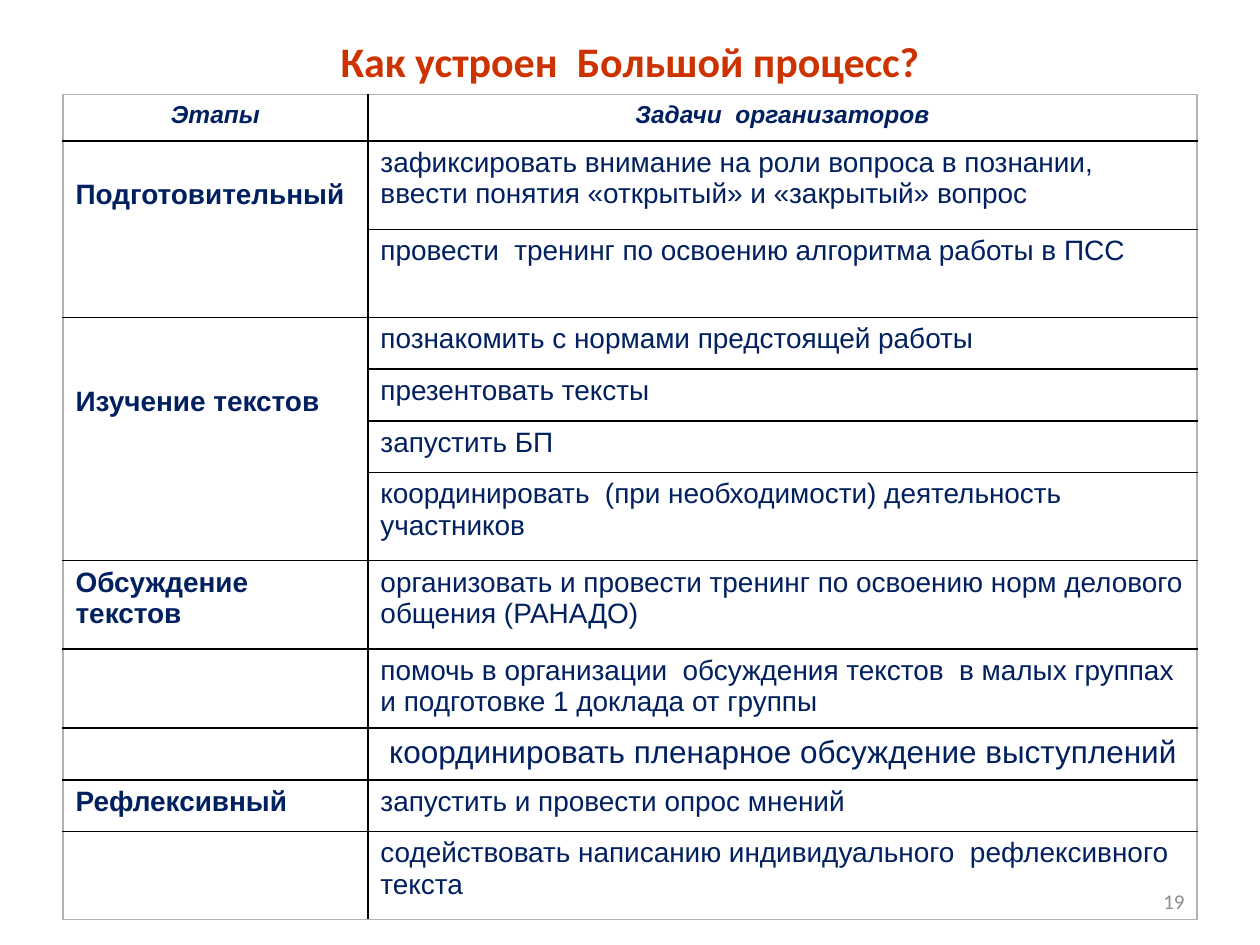
from dataclasses import dataclass

from lxml import etree
from pptx import Presentation
from pptx.dml.color import RGBColor
from pptx.enum import text as t
from pptx.oxml import ns
from pptx.util import Inches, Pt

COLORS = {
    "title": "CC3300",
    "text": "002060",
    "number": "8C8C8C",
    "inner": "000000",
    "outer": "B2B2B2",
    "paper": "FFFFFF",
}
COLUMN_WIDTHS = (2.42, 6.58)
HEADER_HEIGHT, ONE_LINE, TWO_LINES = 0.37, 0.41, 0.7
LINE_HEIGHT = 0.25
MARGIN = 0.05


@dataclass
class Task:
    lines: tuple[str, ...]
    height: float = ONE_LINE
    size: int = 16


@dataclass
class Stage:
    name: str
    tasks: list[Task]
    merged: bool = False
    lines_above: int = 0


STAGES = [
    Stage("Подготовительный", [
        Task(("зафиксировать внимание на роли вопроса в познании,",
              "ввести понятия «открытый» и «закрытый» вопрос"), TWO_LINES),
        Task(("провести  тренинг по освоению алгоритма работы в ПСС",), TWO_LINES),
    ], merged=True, lines_above=1),
    Stage("Изучение текстов", [
        Task(("познакомить с нормами предстоящей работы",)),
        Task(("презентовать тексты",)),
        Task(("запустить БП",)),
        Task(("координировать  (при необходимости) деятельность участников",), TWO_LINES),
    ], merged=True, lines_above=2),
    Stage("Обсуждение текстов", [
        Task(("организовать и провести тренинг по освоению норм делового "
              "общения (РАНАДО)",), TWO_LINES),
        Task(("помочь в организации  обсуждения текстов  в малых группах "
              "и подготовке 1 доклада от группы",), 0.63),
        Task((" координировать пленарное обсуждение выступлений",), size=18),
    ]),
    Stage("Рефлексивный", [
        Task(("запустить и провести опрос мнений",)),
        Task(("содействовать написанию индивидуального  рефлексивного текста",), TWO_LINES),
    ]),
]


def add_run(paragraph, words: str, size: int, color: str, font: str = "Arial",
            bold: bool = False, italic: bool = False) -> None:
    run = paragraph.add_run()
    run.text = words
    run.font.name = font
    run.font.size = Pt(size)
    run.font.bold = bold
    run.font.italic = italic
    run.font.color.rgb = RGBColor.from_string(COLORS[color])


def write_cell(cell, lines: tuple[str, ...], size: int = 16, bold: bool = False,
               italic: bool = False, align=t.PP_ALIGN.LEFT) -> None:
    frame = cell.text_frame
    for index, line in enumerate(lines):
        paragraph = frame.add_paragraph() if index else frame.paragraphs[0]
        paragraph.alignment = align
        add_run(paragraph, line, size, "text", bold=bold, italic=italic)


def set_borders(cell, outer_sides: set[str]) -> None:
    """Draw 1 pt cell edges, paler on the sides that face out of the table."""
    properties = cell._tc.get_or_add_tcPr()
    for position, side in enumerate("LRTB"):
        line = etree.Element(ns.qn(f"a:ln{side}"), w=str(Pt(1)))
        fill = etree.SubElement(line, ns.qn("a:solidFill"))
        color = COLORS["outer" if side in outer_sides else "inner"]
        etree.SubElement(fill, ns.qn("a:srgbClr"), val=color)
        properties.insert(position, line)


def style_cells(table) -> None:
    last_row, last_column = len(table.rows) - 1, len(table.columns) - 1
    for r in range(last_row + 1):
        for c in range(last_column + 1):
            cell = table.cell(r, c)
            cell.fill.solid()
            cell.fill.fore_color.rgb = RGBColor.from_string(COLORS["paper"])
            cell.margin_top = cell.margin_bottom = Inches(MARGIN)
            edges = {"L": c == 0, "R": c == last_column, "T": r == 0, "B": r == last_row}
            set_borders(cell, {side for side, outside in edges.items() if outside})


def add_stage(table, stage: Stage, first: int) -> None:
    name_cell = table.cell(first, 0)
    if stage.merged:
        name_cell.merge(table.cell(first + len(stage.tasks) - 1, 0))
    write_cell(name_cell, (stage.name,), bold=True)
    name_cell.margin_top = Inches(MARGIN + stage.lines_above * LINE_HEIGHT)
    for row, task in enumerate(stage.tasks, first):
        write_cell(table.cell(row, 1), task.lines, task.size)


def add_process_table(slide) -> None:
    heights = [HEADER_HEIGHT] + [task.height for stage in STAGES for task in stage.tasks]
    table = slide.shapes.add_table(
        len(heights), len(COLUMN_WIDTHS), Inches(0.5), Inches(0.75),
        Inches(sum(COLUMN_WIDTHS)), Inches(sum(heights))).table
    table.first_row = table.horz_banding = False
    for column, width in zip(table.columns, COLUMN_WIDTHS):
        column.width = Inches(width)
    for row, height in zip(table.rows, heights):
        row.height = Inches(height)
    style_cells(table)

    for column, heading in enumerate(("Этапы", "Задачи  организаторов")):
        write_cell(table.cell(0, column), (heading,), 14, True, True, t.PP_ALIGN.CENTER)
    first = 1
    for stage in STAGES:
        add_stage(table, stage, first)
        first += len(stage.tasks)


def add_title(slide) -> None:
    title = slide.shapes.title
    title.left, title.top = Inches(0.5), Inches(0.17)
    title.width, title.height = Inches(9), Inches(0.62)
    title.text_frame.vertical_anchor = t.MSO_ANCHOR.MIDDLE
    heading = title.text_frame.paragraphs[0]
    heading.alignment = t.PP_ALIGN.CENTER
    add_run(heading, "Как устроен  Большой процесс?", 24, "title", "Calibri", bold=True)


def add_page_number(slide) -> None:
    frame = slide.shapes.add_textbox(
        Inches(7.17), Inches(6.95), Inches(2.33), Inches(0.4)).text_frame
    frame.word_wrap = True
    frame.vertical_anchor = t.MSO_ANCHOR.MIDDLE
    number = frame.paragraphs[0]
    number.alignment = t.PP_ALIGN.RIGHT
    add_run(number, "19", 12, "number", "Calibri")


def main() -> None:
    deck = Presentation()
    deck.slide_width, deck.slide_height = Inches(10), Inches(7.5)
    slide = deck.slides.add_slide(deck.slide_layouts.get_by_name("Title Only"))
    add_title(slide)
    add_process_table(slide)
    add_page_number(slide)
    deck.save("out.pptx")


if __name__ == "__main__":
    main()
